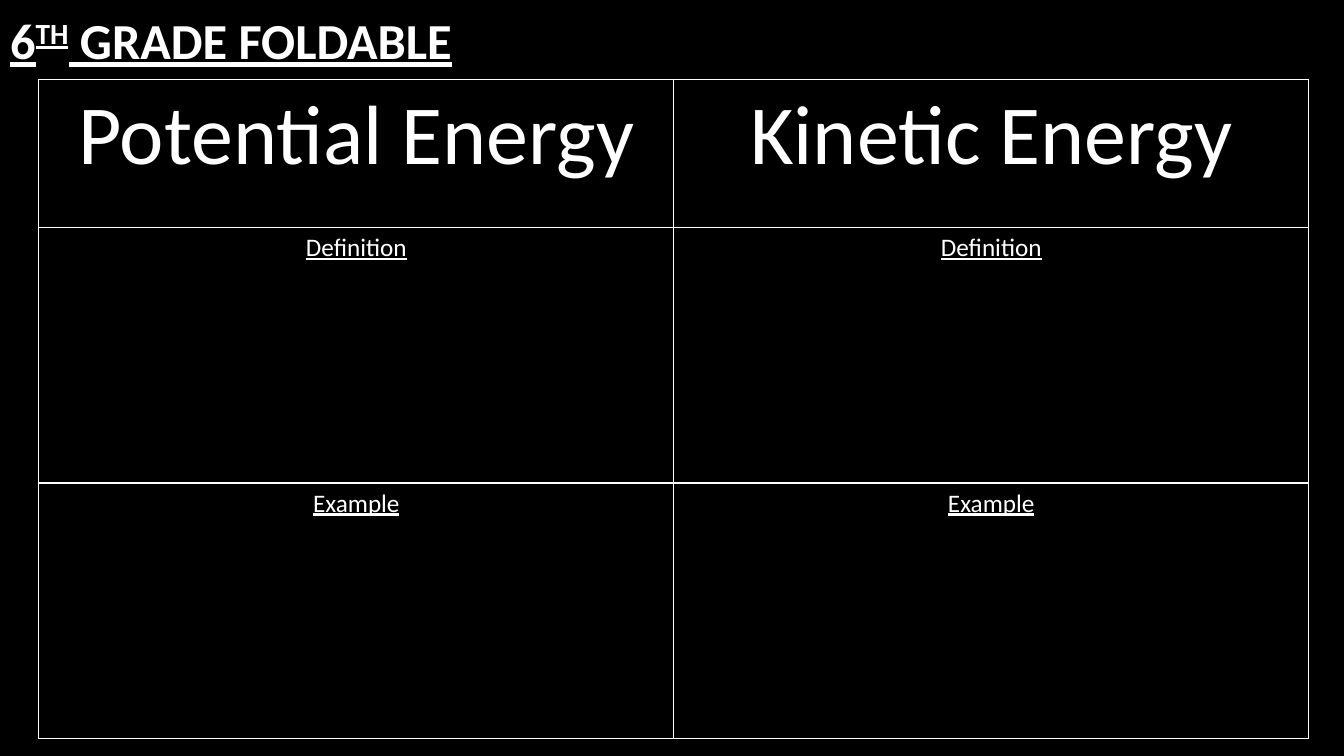
"""Build a foldable slide comparing potential and kinetic energy."""
from lxml import etree
from pptx import Presentation
from pptx.dml.color import RGBColor
from pptx.enum.text import MSO_ANCHOR, PP_ALIGN
from pptx.oxml.ns import qn
from pptx.util import Cm, Pt

BLACK = RGBColor(0x00, 0x00, 0x00)
WHITE = RGBColor(0xFF, 0xFF, 0xFF)
LEFT, CENTER = PP_ALIGN.LEFT, PP_ALIGN.CENTER
MIDDLE = MSO_ANCHOR.MIDDLE
TITLE_ONLY = 5
BORDER_SIDES = ("a:lnL", "a:lnR", "a:lnT", "a:lnB")


class FoldableSlide:
    """Hold the style and the current slide."""

    font_name = "Calibri"
    border_width = Pt(1)

    def __init__(self, deck):
        self.slide = deck.slides.add_slide(deck.slide_layouts[TITLE_ONLY])
        background = self.slide.background.fill
        background.solid()
        background.fore_color.rgb = BLACK

    def add_run(self, paragraph, text, size, bold=False, underline=False):
        run = paragraph.add_run()
        run.text = text
        font = run.font
        font.name, font.size = self.font_name, Pt(size)
        font.bold, font.underline = bold, underline
        font.color.rgb = WHITE
        return run

    def add_title(self, parts, left, top, width, height):
        heading = self.slide.shapes.title
        heading.left, heading.top = left, top
        heading.width, heading.height = width, height
        frame = heading.text_frame
        frame.word_wrap = True
        frame.vertical_anchor = MIDDLE
        paragraph = frame.paragraphs[0]
        paragraph.alignment = LEFT
        for text, baseline in parts:
            run = self.add_run(paragraph, text, 36, bold=True, underline=True)
            if baseline:
                run.font._element.set("baseline", str(baseline * 1000))

    def add_borders(self, cell):
        properties = cell._tc.get_or_add_tcPr()
        for side in BORDER_SIDES:
            line = etree.SubElement(properties, qn(side), w=str(self.border_width))
            fill = etree.SubElement(line, qn("a:solidFill"))
            etree.SubElement(fill, qn("a:srgbClr"), val=str(WHITE))

    def add_grid(self, rows, topics, left, top, width):
        height = sum(row_height for _, _, _, row_height in rows)
        grid = self.slide.shapes.add_table(
            len(rows), topics, left, top, width, height).table
        for column in grid.columns:
            column.width = width // topics
        for index, (labels, size, underline, row_height) in enumerate(rows):
            grid.rows[index].height = row_height
            for topic, label in enumerate(labels):
                cell = grid.cell(index, topic)
                self.add_borders(cell)
                cell.fill.solid()
                cell.fill.fore_color.rgb = BLACK
                paragraph = cell.text_frame.paragraphs[0]
                paragraph.alignment = CENTER
                self.add_run(paragraph, label, size, underline=underline)


def main():
    deck = Presentation()
    deck.slide_width, deck.slide_height = Cm(33.87), Cm(19.05)
    foldable = FoldableSlide(deck)
    foldable.add_title(
        [("6", 0), ("TH", 30), (" GRADE FOLDABLE", 0)],
        Cm(0), Cm(-1.02), Cm(28.14), Cm(4.04))
    energies = ["Potential Energy", "Kinetic Energy"]
    topics = len(energies)
    rows = [(energies, 60, False, Cm(3.73))]
    for prompt in ("Definition", "Example"):
        rows.append(([prompt] * topics, 18, True, Cm(6.44)))
    foldable.add_grid(rows, topics, Cm(0.98), Cm(2), Cm(32))
    deck.save("out.pptx")


if __name__ == "__main__":
    main()
